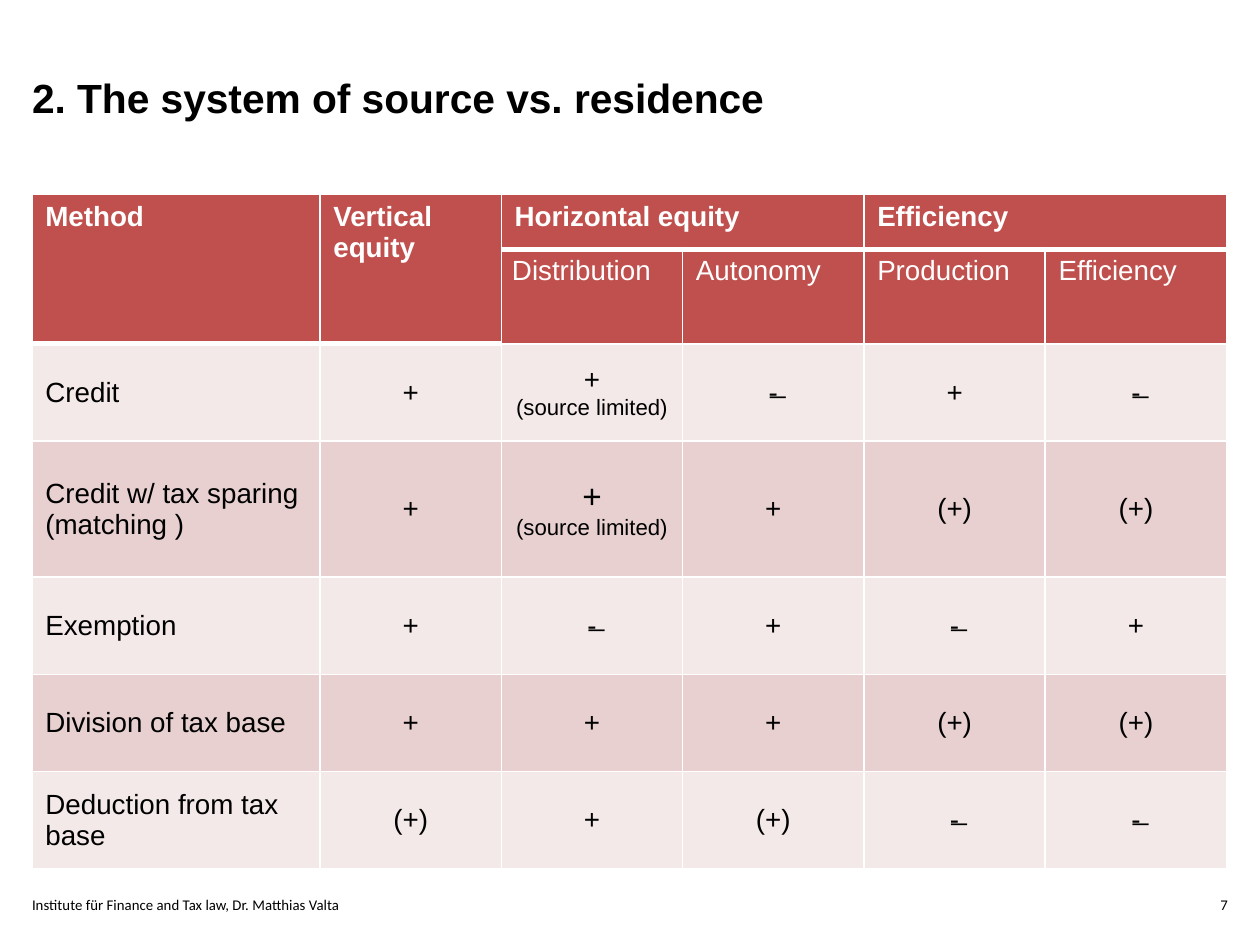
import pptx
import pptx.util
import pptx.dml.color
import pptx.enum.text
import pptx.oxml
import pptx.oxml.ns

Inches, Pt = pptx.util.Inches, pptx.util.Pt
ALIGN, ANCHOR = pptx.enum.text.PP_ALIGN, pptx.enum.text.MSO_ANCHOR

# Content: a cell is a list of (line, size)
TITLE = "2. The system of source vs. residence"
FOOT = "Institute für Finance and Tax law, Dr. Matthias Valta"
PAGE = "7"
SIZE = 15
PLUS, PART, MINUS = [("+", SIZE)], [("(+)", SIZE)], [("-̶", SIZE)]
NOTE = ("(source limited)", 12)
# Header: row, column, rows spanned, columns spanned, lines
HEADS = [
    (0, 0, 2, 1, ["Method"]),
    (0, 1, 2, 1, ["Vertical", "equity"]),
    (0, 2, 1, 2, ["Horizontal equity"]),
    (0, 4, 1, 2, ["Efficiency"]),
    (1, 2, 1, 1, ["Distribution"]),
    (1, 3, 1, 1, ["Autonomy"]),
    (1, 4, 1, 1, ["Production"]),
    (1, 5, 1, 1, ["Efficiency"]),
]
BODY = [
    ("Credit", PLUS, [("+", SIZE), NOTE], MINUS, PLUS, MINUS),
    ("Credit w/ tax sparing (matching )", PLUS, [("+", 18), NOTE], PLUS, PART, PART),
    ("Exemption", PLUS, MINUS, PLUS, MINUS, PLUS),
    ("Division of tax base", PLUS, PLUS, PLUS, PART, PART),
    ("Deduction from tax base", PART, PLUS, PART, MINUS, MINUS),
]
WIDTHS = [2.16] + [1.36] * 5
HEIGHTS = [0.41, 0.71, 0.73, 1.02, 0.73, 0.73, 0.73]
LEFT, TOP = 0.24, 1.46
RED, BANDS = "C0504D", ("F4E9E9", "E8D0D0")
BLACK, WHITE = "000000", "FFFFFF"


def color(code):
    return pptx.dml.color.RGBColor.from_string(code)


def write(frame, lines, tint, align=ALIGN.LEFT, bold=False, face="Arial"):
    for i, (text, size) in enumerate(lines):
        para = frame.paragraphs[0] if i == 0 else frame.add_paragraph()
        para.alignment = align
        run = para.add_run()
        run.text = text
        font = run.font
        font.name, font.size, font.bold = face, Pt(size), bold
        font.color.rgb = color(tint)


def label(box, text, size, anchor, **style):
    frame = slide.shapes.add_textbox(*map(Inches, box)).text_frame
    frame.word_wrap = True
    frame.vertical_anchor = anchor
    frame.margin_left = frame.margin_right = 0
    frame.margin_top = frame.margin_bottom = 0
    write(frame, [(text, size)], BLACK, **style)
    return frame


def border(cell, **widths):
    props = cell._tc.get_or_add_tcPr()
    for side in "LRTB":
        width = Pt(widths.get(side, 1))
        props.append(pptx.oxml.parse_xml(
            f'<a:ln{side} {pptx.oxml.ns.nsdecls("a")} w="{width}"><a:solidFill>'
            f'<a:srgbClr val="{WHITE}"/></a:solidFill></a:ln{side}>'))


deck = pptx.Presentation()
deck.slide_width, deck.slide_height = Inches(9.45), Inches(7.09)
slide = deck.slides.add_slide(deck.slide_layouts[6])

# Title and footer
title = label((LEFT, 0.51, 6.58, 1.18), TITLE, 22, ANCHOR.TOP, bold=True)
title.paragraphs[0].line_spacing = Pt(29)
label((LEFT, 6.65, 5.98, 0.2), FOOT, 8, ANCHOR.BOTTOM, face="Calibri")
label((6.77, 6.69, 2.44, 0.16), PAGE, 8, ANCHOR.BOTTOM,
      align=ALIGN.RIGHT, face="Calibri")

# Table grid
table = slide.shapes.add_table(
    len(HEIGHTS), len(WIDTHS), Inches(LEFT), Inches(TOP),
    Inches(sum(WIDTHS)), Inches(sum(HEIGHTS))).table
table.first_row = table.horz_banding = False
for col, width in zip(table.columns, WIDTHS):
    col.width = Inches(width)
for row, height in zip(table.rows, HEIGHTS):
    row.height = Inches(height)

# Borders and fills: a thick rule runs below each top heading
for r in range(len(HEIGHTS)):
    for c in range(len(WIDTHS)):
        cell = table.cell(r, c)
        edge = 1 if c > 1 else 2
        border(cell, T=3 if r == edge else 1,
               B=3 if r == 0 or r == edge - 1 else 1)
        cell.fill.solid()
        cell.fill.fore_color.rgb = color(RED if r < 2 else BANDS[r % 2])

# Header text
for r, c, down, wide, lines in HEADS:
    cell = table.cell(r, c)
    if down * wide > 1:
        cell.merge(table.cell(r + down - 1, c + wide - 1))
    write(cell.text_frame, [(line, SIZE) for line in lines], WHITE, bold=r == 0)
table.cell(1, 2).margin_left = table.cell(1, 2).margin_right = Inches(0.08)

# Body text
for r, (name, *marks) in enumerate(BODY, 2):
    for c, lines in enumerate([[(name, SIZE)]] + marks):
        cell = table.cell(r, c)
        cell.vertical_anchor = ANCHOR.MIDDLE
        write(cell.text_frame, lines, BLACK, ALIGN.CENTER if c else ALIGN.LEFT)

deck.save("out.pptx")
